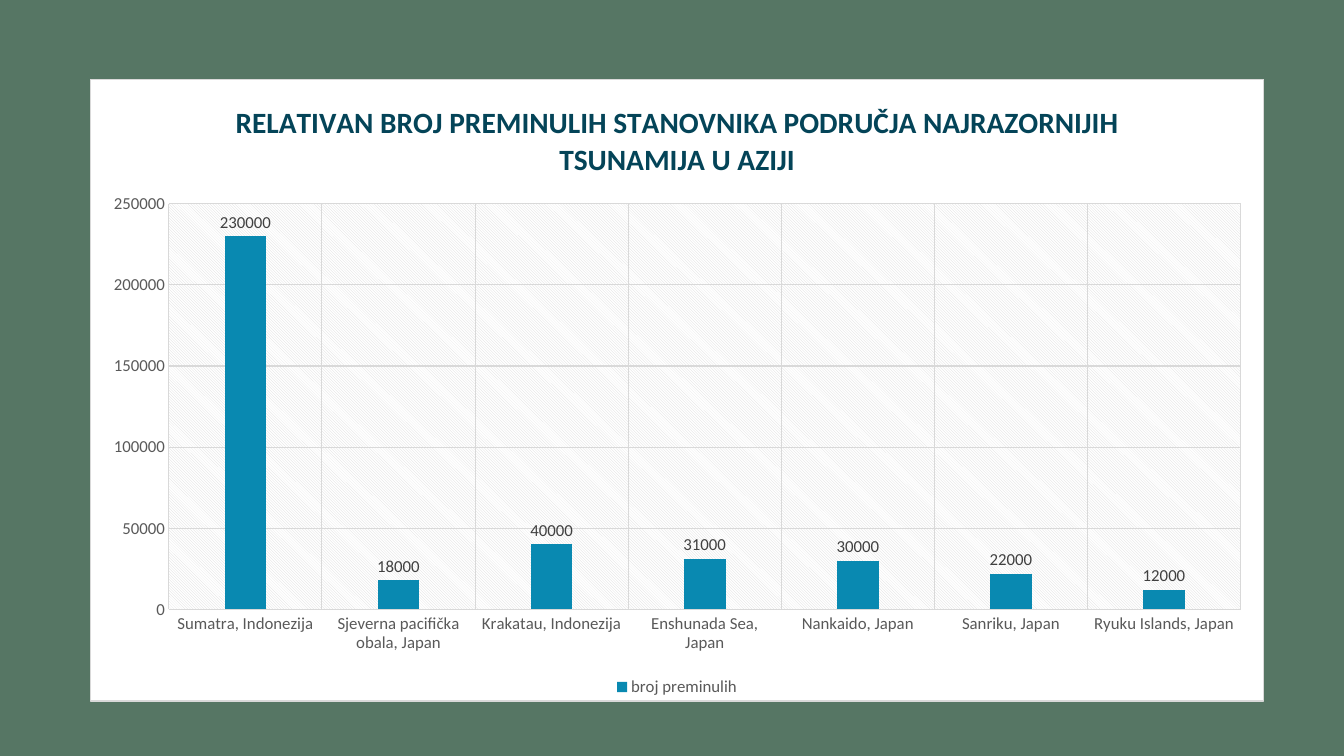
from lxml.etree import fromstring
from pptx import Presentation
from pptx.chart.data import CategoryChartData
from pptx.dml.color import RGBColor
from pptx.enum.chart import XL_CHART_TYPE as ChartType
from pptx.enum.chart import XL_LABEL_POSITION as LabelPosition
from pptx.enum.chart import XL_LEGEND_POSITION as LegendPosition
from pptx.enum.chart import XL_TICK_MARK as TickMark
from pptx.util import Inches, Pt

NAMESPACES = (
    'xmlns:c="http://schemas.openxmlformats.org/drawingml/2006/chart" '
    'xmlns:a="http://schemas.openxmlformats.org/drawingml/2006/main"'
)

DEATHS = {
    "Sumatra, Indonezija": 230000,
    "Sjeverna pacifička obala, Japan": 18000,
    "Krakatau, Indonezija": 40000,
    "Enshunada Sea, Japan": 31000,
    "Nankaido, Japan": 30000,
    "Sanriku, Japan": 22000,
    "Ryuku Islands, Japan": 12000,
}


def color(value):
    return RGBColor.from_string(value)


def style_font(font, size=12, fill="595959", bold=False):
    font.name = "Calibri"
    font.size = Pt(size)
    font.bold = bold
    font.color.rgb = color(fill)


def write_text(frame, text, **style):
    run = frame.paragraphs[0].add_run()
    run.text = text
    style_font(run.font, **style)


class TsunamiSlide:
    background = "567664"
    grid = "D9D9D9"
    paper = "FFFFFF"
    bars = "0989B1"
    heading = "044458"
    label = "404040"

    def __init__(self, presentation):
        self.slide = presentation.slides.add_slide(presentation.slide_layouts[6])
        fill = self.slide.background.fill
        fill.solid()
        fill.fore_color.rgb = color(self.background)

    def add_column_chart(self, series_name, values, left, top, width, height):
        data = CategoryChartData(number_format="General")
        data.categories = list(values)
        data.add_series(series_name, list(values.values()))
        chart = self.slide.shapes.add_chart(
            ChartType.COLUMN_CLUSTERED,
            Inches(left), Inches(top), Inches(width), Inches(height), data,
        ).chart
        style_font(chart.font)
        self.style_columns(chart.plots[0])
        for axis in (chart.category_axis, chart.value_axis):
            self.style_axis(axis)
        chart.category_axis.format.line.color.rgb = color(self.grid)
        chart.category_axis.format.line.width = Pt(0.75)
        chart.value_axis.format.line.fill.background()
        chart.value_axis.minimum_scale = 0
        chart.value_axis.maximum_scale = 250000
        chart.value_axis.major_unit = 50000
        self.add_legend(chart)
        self.style_frame(chart)
        return chart

    def style_columns(self, plot):
        plot.gap_width = 267
        plot.overlap = -43
        plot.vary_by_categories = False
        deaths = plot.series[0]
        deaths.format.fill.solid()
        deaths.format.fill.fore_color.rgb = color(self.bars)
        labels = deaths.data_labels
        labels.show_value = True
        labels.position = LabelPosition.OUTSIDE_END
        style_font(labels.font, fill=self.label)

    def style_axis(self, axis):
        axis.major_tick_mark = TickMark.NONE
        axis.minor_tick_mark = TickMark.NONE
        axis.has_major_gridlines = True
        gridline = axis.major_gridlines.format.line
        gridline.color.rgb = color(self.grid)
        gridline.width = Pt(0.75)
        style_font(axis.tick_labels.font)

    def add_title(self, chart, text):
        chart.has_title = True
        chart.chart_title.include_in_layout = False
        write_text(chart.chart_title.text_frame, text,
                   size=21, fill=self.heading, bold=True)

    def add_legend(self, chart):
        chart.has_legend = True
        chart.legend.position = LegendPosition.BOTTOM
        chart.legend.include_in_layout = False
        style_font(chart.legend.font)

    def style_frame(self, chart):
        frame = fromstring(
            f'<c:spPr {NAMESPACES}>'
            f'<a:solidFill><a:srgbClr val="{self.paper}"/></a:solidFill>'
            f'<a:ln w="{Pt(0.75)}"><a:solidFill><a:srgbClr val="{self.grid}"/>'
            f'</a:solidFill></a:ln></c:spPr>'
        )
        chart.element.chart.addnext(frame)

    def place_plot(self, chart, left, top, width, height):
        area = chart.element.chart.plotArea
        for layout in area.xpath("c:layout"):
            area.remove(layout)
        places = {"x": left, "y": top, "w": width, "h": height}
        numbers = "".join(f'<c:{key} val="{value}"/>' for key, value in places.items())
        area.insert(0, fromstring(
            f'<c:layout {NAMESPACES}><c:manualLayout><c:layoutTarget val="inner"/>'
            f'<c:xMode val="edge"/><c:yMode val="edge"/>{numbers}'
            f'</c:manualLayout></c:layout>'
        ))
        area.append(fromstring(
            f'<c:spPr {NAMESPACES}><a:pattFill prst="ltDnDiag">'
            f'<a:fgClr><a:srgbClr val="{self.grid}"/></a:fgClr>'
            f'<a:bgClr><a:srgbClr val="{self.paper}"/></a:bgClr>'
            f'</a:pattFill><a:ln><a:noFill/></a:ln></c:spPr>'
        ))


def main():
    presentation = Presentation()
    presentation.slide_width = Inches(13.33)
    presentation.slide_height = Inches(7.5)
    tsunamis = TsunamiSlide(presentation)
    width, height = 11.65, 6.18
    chart = tsunamis.add_column_chart(
        "broj preminulih", DEATHS, 0.89, 0.78, width, height)
    tsunamis.add_title(
        chart,
        "RELATIVAN BROJ PREMINULIH STANOVNIKA PODRUČJA NAJRAZORNIJIH TSUNAMIJA U AZIJI",
    )
    tsunamis.place_plot(
        chart, 0.78 / width, 1.24 / height, 10.64 / width, 4.03 / height)
    presentation.save("out.pptx")


if __name__ == "__main__":
    main()
